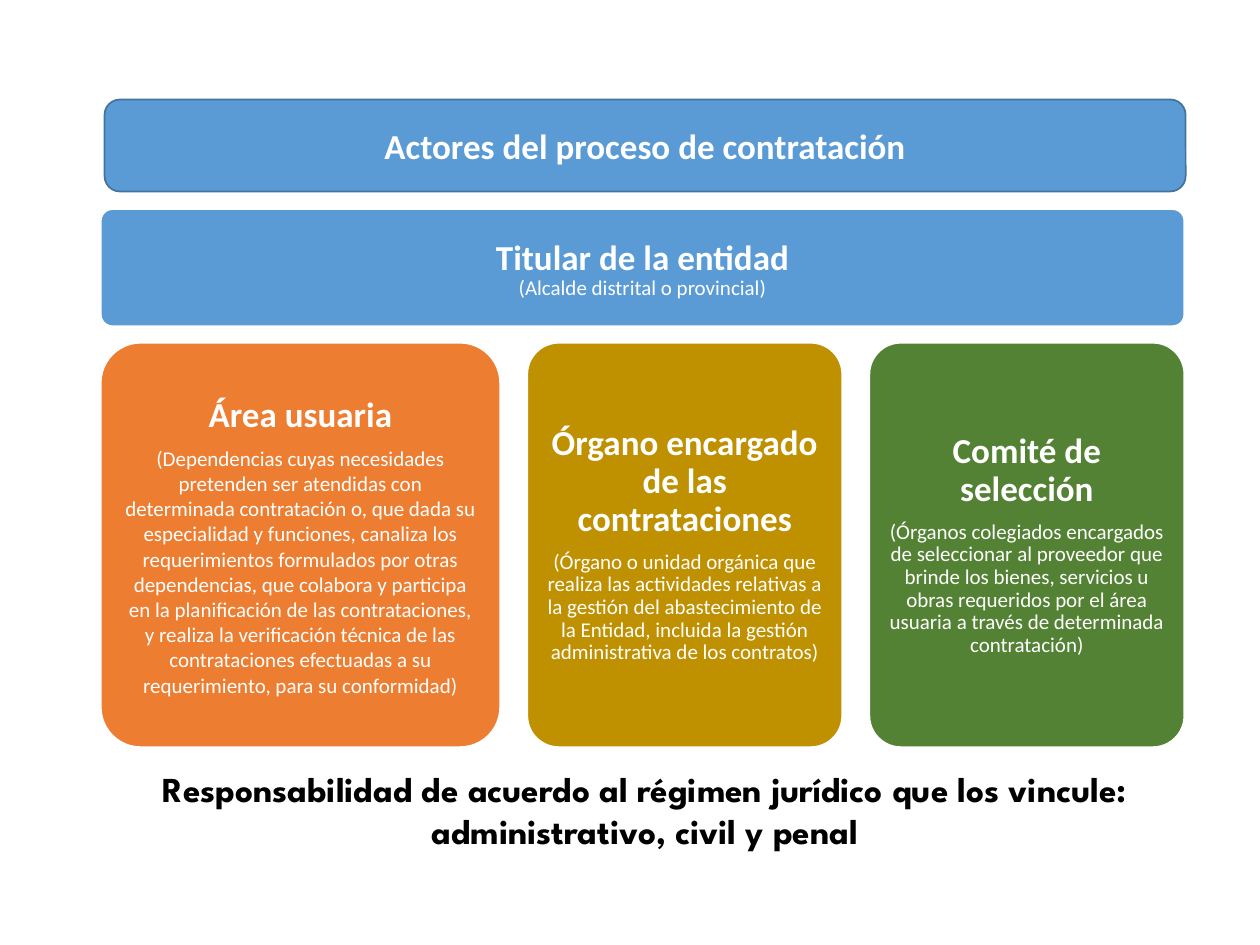
import pptx
import pptx.dml.color
import pptx.enum.shapes
import pptx.enum.text
import pptx.util

Inches = pptx.util.Inches
Pt = pptx.util.Pt
CENTER = pptx.enum.text.PP_ALIGN.CENTER
MIDDLE = pptx.enum.text.MSO_ANCHOR.MIDDLE
ROUNDED = pptx.enum.shapes.MSO_SHAPE.ROUNDED_RECTANGLE


def color(hex_value):
    return pptx.dml.color.RGBColor.from_string(hex_value)


def write_paragraph(paragraph, text, size, bold, font="Calibri", text_color="FFFFFF"):
    paragraph.alignment = CENTER
    run = paragraph.add_run()
    run.text = text
    run.font.name = font
    run.font.size = Pt(size)
    run.font.bold = bold
    run.font.color.rgb = color(text_color)


presentation = pptx.Presentation()
presentation.slide_width = Inches(10)
presentation.slide_height = Inches(7.5)
slide = presentation.slides.add_slide(presentation.slide_layouts[5])

# Page grid
left, width = 0.8, 8.6
header_left, header_width = 0.83, 8.58
header_top, header_height = 0.79, 0.73
holder_top, holder_height = 1.66, 0.93
cards_top, cards_height = 2.72, 3.21
card_widths = [3.17, 2.5, 2.5]
gap = (width - sum(card_widths)) / (len(card_widths) - 1)

# Heading, description, fill, line spacing of heading and description, gap in points
cards = [
    ("Área usuaria",
     "(Dependencias cuyas necesidades pretenden ser atendidas con determinada "
     "contratación o, que dada su especialidad y funciones, canaliza los "
     "requerimientos formulados por otras dependencias, que colabora y participa "
     "en la planificación de las contrataciones, y realiza la verificación técnica "
     "de las contrataciones efectuadas a su requerimiento, para su conformidad)",
     "ED7D31", 1.0, 1.0, 6),
    ("Órgano encargado de las contrataciones",
     "(Órgano o unidad orgánica que realiza las actividades relativas a la gestión "
     "del abastecimiento de la Entidad, incluida la gestión administrativa de los "
     "contratos)",
     "BF9000", 0.9, 0.9, 7),
    ("Comité de selección",
     "(Órganos colegiados encargados de seleccionar al proveedor que brinde los "
     "bienes, servicios u obras requeridos por el área usuaria a través de "
     "determinada contratación)",
     "548235", 0.9, 0.9, 7),
]

# The entity holder spans the page; the three cards share the row below it
blocks = [(left, holder_top, width, holder_height,
           ("Titular de la entidad", "(Alcalde distrital o provincial)",
            "5B9BD5", 1.0, 0.9, 0))]
card_left = left
for card, card_width in zip(cards, card_widths):
    blocks.append((card_left, cards_top, card_width, cards_height, card))
    card_left += card_width + gap

for block_left, block_top, block_width, block_height, content in blocks:
    heading, description, fill, heading_spacing, description_spacing, space = content
    shape = slide.shapes.add_shape(ROUNDED, Inches(block_left), Inches(block_top),
                                   Inches(block_width), Inches(block_height))
    shape.adjustments[0] = 0.1
    shape.shadow.inherit = False
    shape.fill.solid()
    shape.fill.fore_color.rgb = color(fill)
    shape.line.color.rgb = color("FFFFFF")
    shape.line.width = Pt(1)
    frame = shape.text_frame
    frame.word_wrap = True
    frame.vertical_anchor = MIDDLE
    frame.margin_left = frame.margin_right = Inches(0.08)
    frame.margin_top = frame.margin_bottom = Inches(0.08)
    paragraph = frame.paragraphs[0]
    paragraph.line_spacing = heading_spacing
    paragraph.space_after = Pt(space)
    write_paragraph(paragraph, heading, 20, True)
    paragraph = frame.add_paragraph()
    paragraph.line_spacing = description_spacing
    write_paragraph(paragraph, description, 12, False)

# Closing statement
box = slide.shapes.add_textbox(Inches(header_left), Inches(6.04),
                               Inches(header_width), Inches(0.77))
box.text_frame.word_wrap = True
write_paragraph(box.text_frame.paragraphs[0],
                "Responsabilidad de acuerdo al régimen jurídico que los vincule: "
                "administrativo, civil y penal",
                20, True, "League Spartan", "000000")

# Header bar with the title on top of it
header = [Inches(value) for value in
          (header_left, header_top, header_width, header_height)]
bar = slide.shapes.add_shape(ROUNDED, *header)
bar.shadow.inherit = False
bar.fill.solid()
bar.fill.fore_color.rgb = color("5B9BD5")
bar.line.color.rgb = color("43739E")
bar.line.width = Pt(1)

title = slide.shapes.title
title.left, title.top, title.width, title.height = header
title.text_frame.auto_size = pptx.enum.text.MSO_AUTO_SIZE.NONE
title.text_frame.vertical_anchor = MIDDLE
write_paragraph(title.text_frame.paragraphs[0],
                "Actores del proceso de contratación", 20, True)
# The title was created first, so bring it in front of the bar
bar.element.addnext(title.element)

presentation.save("out.pptx")
